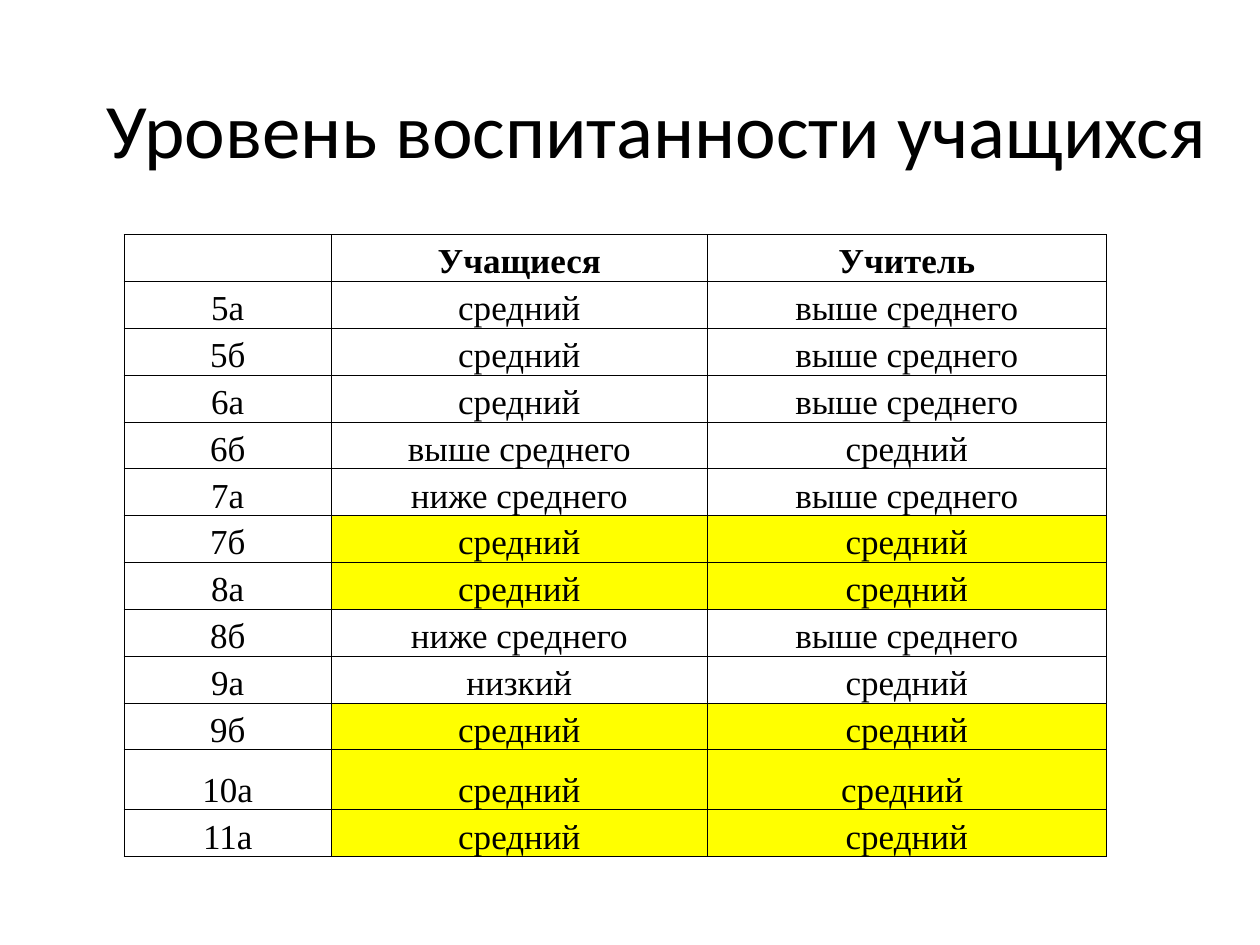
from dataclasses import dataclass

from lxml.etree import SubElement as Sub
from pptx import Presentation
from pptx.dml.color import RGBColor as RGB
from pptx.enum.text import MSO_ANCHOR as Anchor, PP_ALIGN as Align
from pptx.oxml.ns import qn
from pptx.util import Cm, Pt


@dataclass(frozen=True)
class Theme:
    ink: str = "000000"
    match: str = "FFFF00"
    head_font: str = "Calibri"
    body_font: str = "Times New Roman"
    head_size: int = 44
    body_size: int = 20
    rule: float = 0.5


LOW, BELOW, MID, ABOVE = "низкий", "ниже среднего", "средний", "выше среднего"
HEAD = ("", "Учащиеся", "Учитель")
LEVELS = [
    ("5а", MID, ABOVE),
    ("5б", MID, ABOVE),
    ("6а", MID, ABOVE),
    ("6б", ABOVE, MID),
    ("7а", BELOW, ABOVE),
    ("7б", MID, MID),
    ("8а", MID, MID),
    ("8б", BELOW, ABOVE),
    ("9а", LOW, MID),
    ("9б", MID, MID),
    ("10а", MID, MID + " "),
    ("11а", MID, MID),
]
COLS = (4.18, 7.58, 8.04)
HIGH, TALL, TALL_ROW = 12.54, 1.21, 11


class Deck:
    def __init__(self, theme):
        self.theme = theme
        self.prs = Presentation()
        self.prs.slide_width, self.prs.slide_height = Cm(25.4), Cm(19.05)
        self.slide = self.prs.slides.add_slide(self.prs.slide_layouts[6])

    def style(self, para, face, size, bold=False):
        font = para.font
        font.name, font.size, font.bold = face, Pt(size), bold
        font.color.rgb = RGB.from_string(self.theme.ink)

    def title(self, text, x, y, w, h):
        frame = self.slide.shapes.add_textbox(Cm(x), Cm(y), Cm(w), Cm(h)).text_frame
        frame.word_wrap = True
        frame.vertical_anchor = Anchor.MIDDLE
        para = frame.paragraphs[0]
        para.text = text
        para.line_spacing = 0.9
        self.style(para, self.theme.head_font, self.theme.head_size)

    def border(self, cell):
        """Rule all four sides of a cell; call before filling it."""
        props = cell._tc.get_or_add_tcPr()
        for side in ("lnL", "lnR", "lnT", "lnB"):
            line = Sub(props, qn(f"a:{side}"), w=str(Pt(self.theme.rule)))
            Sub(Sub(line, qn("a:solidFill")), qn("a:srgbClr"), val=self.theme.ink)

    def cell(self, cell, text, bold, match):
        cell.margin_left = cell.margin_right = 0
        cell.margin_top = cell.margin_bottom = 0
        cell.vertical_anchor = Anchor.BOTTOM
        self.border(cell)
        if match:
            cell.fill.solid()
            cell.fill.fore_color.rgb = RGB.from_string(self.theme.match)
        else:
            cell.fill.background()
        para = cell.text_frame.paragraphs[0]
        if text:
            para.text = text
        para.alignment = Align.CENTER
        self.style(para, self.theme.body_font, self.theme.body_size, bold)

    def table(self, rows, x, y):
        """Draw the grid, marking the rows where both levels agree."""
        grid = self.slide.shapes.add_table(
            len(rows), len(COLS), Cm(x), Cm(y), Cm(sum(COLS)), Cm(HIGH)
        ).table
        grid.first_row = grid.horz_banding = False
        for col, wide in zip(grid.columns, COLS):
            col.width = Cm(wide)
        low = (HIGH - TALL) / (len(rows) - 1)
        for r, row in enumerate(rows):
            grid.rows[r].height = Cm(TALL if r == TALL_ROW else low)
            same = row[1].strip() == row[2].strip()
            for c, text in enumerate(row):
                self.cell(grid.cell(r, c), text, r == 0, same and c > 0)

    def save(self):
        self.prs.save("out.pptx")


def main():
    deck = Deck(Theme())
    deck.title("Уровень воспитанности учащихся", 1.9, 1.11, 22.86, 3.18)
    deck.table([HEAD, *LEVELS], 2.5, 4.73)
    deck.save()


if __name__ == "__main__":
    main()
